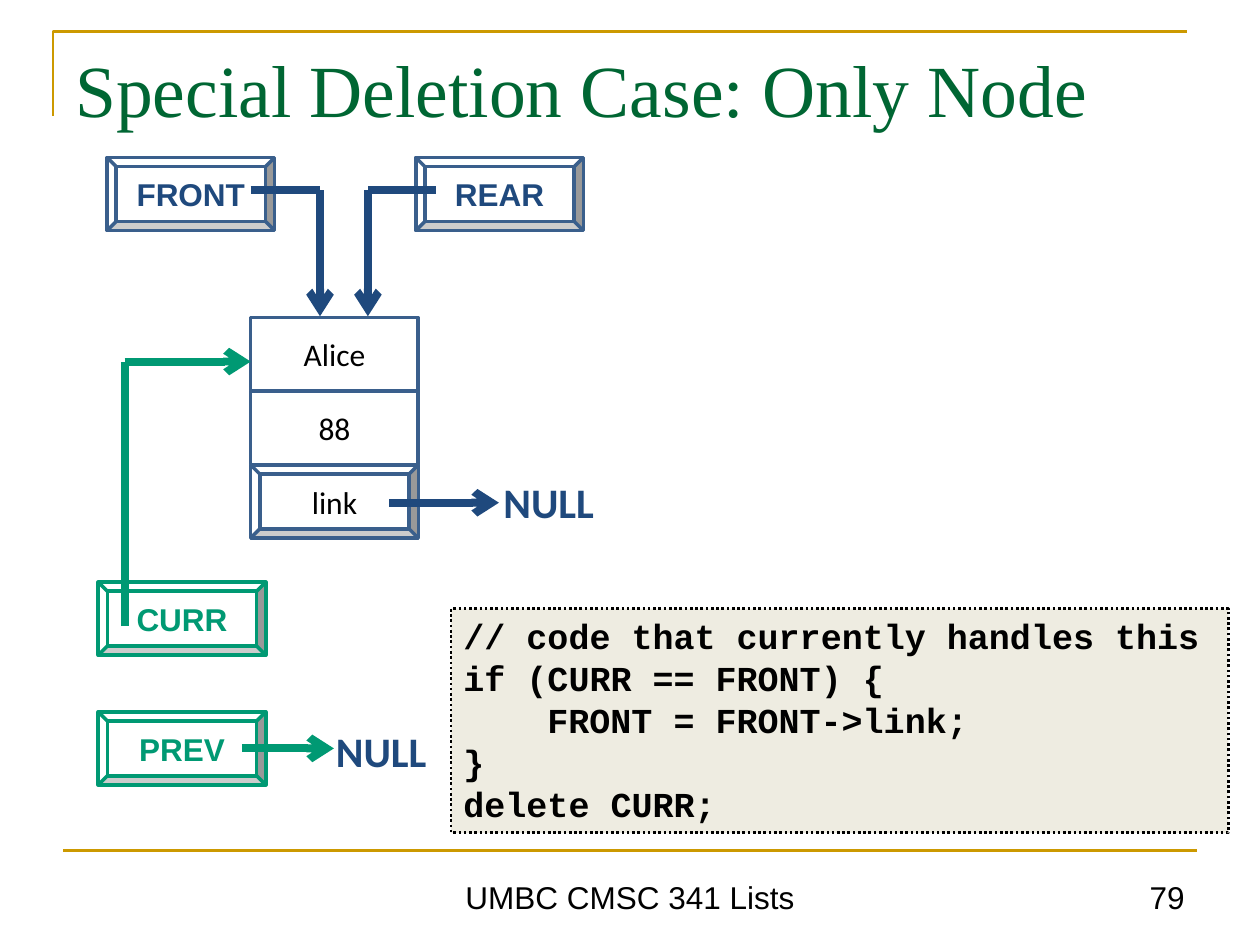
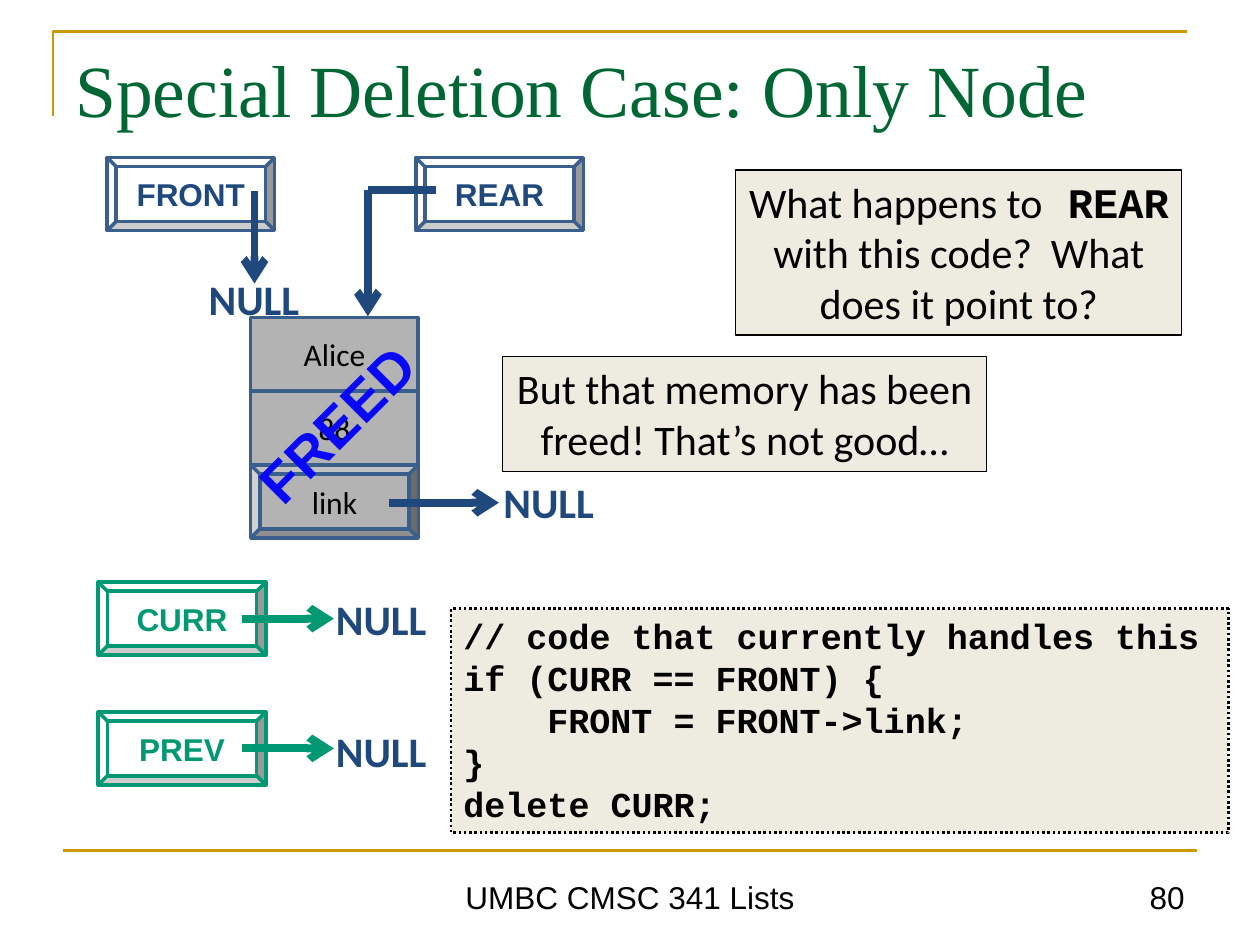
"""Build two slides on deleting the only node of a linked list."""
import pptx
import pptx.dml.color
import pptx.enum.dml
import pptx.enum.shapes
import pptx.enum.text
import pptx.oxml
import pptx.oxml.ns
import pptx.util

Inches = pptx.util.Inches
Pt = pptx.util.Pt
SHAPES = pptx.enum.shapes.MSO_SHAPE
ALIGN = pptx.enum.text.PP_ALIGN
ANCHOR = pptx.enum.text.MSO_ANCHOR

COLOURS = {
    "gold": "CC9900", "title": "006633", "black": "000000", "white": "FFFFFF",
    "navy": "1F497D", "edge": "3A5F8C", "green": "009973", "freed": "B3B3B3",
    "cream": "EEECE1", "blue": "0909F6", "deep_blue": "0101B3",
}
FORMATS = {
    "title": {"name": "Times New Roman", "size": Pt(42)},
    "footer": {"name": "Arial", "size": Pt(18)},
    "field": {"name": "Calibri", "size": Pt(18)},
    "pointer": {"name": "Arial", "size": Pt(18), "bold": True},
    "null": {"name": "Calibri", "size": Pt(24), "bold": True},
    "code": {"name": "Courier New", "size": Pt(20), "bold": True},
    "note": {"name": "Calibri", "size": Pt(24)},
    "note_code": {"name": "Courier New", "size": Pt(24), "bold": True},
    "stamp": {"name": "Arial", "size": Pt(32), "bold": True},
}
BOX_WIDTH, BOX_HEIGHT = 1.33, 0.58
NODE_LEFT, NODE_TOP, ROW_STEP = 1.99, 2.52, 0.585
CODE = [
    ("// code that currently handles this", 0),
    ("if (CURR == FRONT) {", 0),
    ("FRONT = FRONT->link;", 4),
    ("}", 0),
    ("delete CURR;", 0),
]
CODE_CHARACTER = Pt(12)


class ListDeck:
    """Hold the shared style and the slide being drawn."""

    def __init__(self):
        self.presentation = pptx.Presentation()
        self.presentation.slide_width = Inches(10)
        self.presentation.slide_height = Inches(7.5)
        self.slide = None

    def colour(self, name):
        return pptx.dml.color.RGBColor.from_string(COLOURS[name])

    def styled_run(self, paragraph, text, style, colour="black"):
        run = paragraph.add_run()
        run.text = text
        for attribute, value in FORMATS[style].items():
            setattr(run.font, attribute, value)
        run.font.color.rgb = self.colour(colour)

    def text(self, place, text, style, colour="black", align=ALIGN.CENTER, anchor=ANCHOR.TOP):
        shape = self.slide.shapes.add_textbox(*map(Inches, place))
        shape.text_frame.word_wrap = True
        shape.text_frame.vertical_anchor = anchor
        paragraph = shape.text_frame.paragraphs[0]
        paragraph.alignment = align
        self.styled_run(paragraph, text, style, colour)
        return shape

    def panel(self, kind, place, fill, line, width, anchor=ANCHOR.TOP):
        shape = self.slide.shapes.add_shape(kind, *map(Inches, place))
        shape.shadow.inherit = False
        shape.fill.solid()
        shape.fill.fore_color.rgb = self.colour(fill)
        shape.line.color.rgb = self.colour(line)
        shape.line.width = Pt(width)
        shape.text_frame.word_wrap = True
        shape.text_frame.vertical_anchor = anchor
        return shape

    def box(self, kind, left, top, text, style, colour, line, fill="white"):
        place = (left, top, BOX_WIDTH, BOX_HEIGHT)
        shape = self.panel(kind, place, fill, line, 2, ANCHOR.MIDDLE)
        paragraph = shape.text_frame.paragraphs[0]
        paragraph.alignment = ALIGN.CENTER
        self.styled_run(paragraph, text, style, colour)

    def pointer(self, left, top, name, colour="navy", line="edge"):
        self.box(SHAPES.BEVEL, left, top, name, "pointer", colour, line)

    def node(self, fill):
        kinds = (SHAPES.RECTANGLE, SHAPES.RECTANGLE, SHAPES.BEVEL)
        rows = list(enumerate(zip(kinds, ("Alice", "88", "link"))))
        for row, (kind, text) in reversed(rows):
            top = NODE_TOP + row * ROW_STEP
            self.box(kind, NODE_LEFT, top, text, "field", "black", "edge", fill)

    def line(self, start, end, colour="navy", width=4.5, arrow=False):
        connector = self.slide.shapes.add_connector(
            pptx.enum.shapes.MSO_CONNECTOR.STRAIGHT, *map(Inches, start + end))
        connector.line.color.rgb = self.colour(colour)
        connector.line.width = Pt(width)
        properties = connector._element.spPr
        properties.append(pptx.oxml.parse_xml(
            f"<a:effectLst {pptx.oxml.ns.nsdecls('a')}/>"))
        if arrow:
            connector.line._get_or_add_ln().append(pptx.oxml.parse_xml(
                f"<a:tailEnd {pptx.oxml.ns.nsdecls('a')} type='arrow'/>"))

    def elbow(self, start, corner, end, colour="navy"):
        self.line(corner, end, colour, arrow=True)
        self.line(start, corner, colour)

    def null(self, left, top):
        self.text((left, top, 1.55, 0.51), "NULL", "null", "navy")

    def null_arrow(self, y, null_top):
        self.line((1.92, y), (2.65, y), "green", arrow=True)
        self.null(2.25, null_top)

    def code(self):
        shape = self.panel(SHAPES.RECTANGLE, (3.58, 4.83, 6.17, 1.78), "cream", "black", 1.5)
        shape.line.dash_style = pptx.enum.dml.MSO_LINE.ROUND_DOT
        frame = shape.text_frame
        for number, (text, indent) in enumerate(CODE):
            paragraph = frame.add_paragraph() if number else frame.paragraphs[0]
            paragraph.alignment = ALIGN.LEFT
            paragraph._p.get_or_add_pPr().set("marL", str(indent * CODE_CHARACTER))
            self.styled_run(paragraph, text, "code")

    def note(self, place, *runs):
        shape = self.panel(SHAPES.RECTANGLE, place, "cream", "black", 0.75)
        paragraph = shape.text_frame.paragraphs[0]
        paragraph.alignment = ALIGN.CENTER
        for text, style in runs:
            self.styled_run(paragraph, text, style)

    def stamp(self, place, text):
        shape = self.text(place, text, "stamp")
        shape.text_frame.word_wrap = False
        shape.rotation = 315
        font = shape.text_frame.paragraphs[0].runs[0].font
        font._element.set("spc", "50")
        font.fill.gradient()
        font.fill.gradient_angle = 270
        stops = zip(font.fill.gradient_stops, (0.25, 1), ("blue", "deep_blue"))
        for stop, position, colour in stops:
            stop.position = position
            stop.color.rgb = self.colour(colour)

    def start_slide(self, number, node_fill):
        self.slide = self.presentation.slides.add_slide(self.presentation.slide_layouts[6])
        builder = self.slide.shapes.build_freeform(Inches(0.42), Inches(0.92))
        corners = [(0.42, 0.25), (9.42, 0.25)]
        builder.add_line_segments([tuple(map(Inches, corner)) for corner in corners], close=False)
        frame = builder.convert_to_shape()
        frame.shadow.inherit = False
        frame.fill.background()
        frame.line.color.rgb = self.colour("gold")
        frame.line.width = Pt(1.5)
        self.line((0.5, 6.75), (9.5, 6.75), "gold", 1.5)
        self.text((0.5, 0.3, 8.99, 1.11), "Special Deletion Case: Only Node",
                  "title", "title", ALIGN.LEFT)
        self.text((1.75, 6.83, 6.5, 0.49), "UMBC CMSC 341 Lists", "footer", anchor=ANCHOR.BOTTOM)
        self.text((7.17, 6.83, 2.33, 0.49), str(number), "footer",
                  align=ALIGN.RIGHT, anchor=ANCHOR.BOTTOM)
        self.node(node_fill)
        self.pointer(0.85, 1.25, "FRONT")
        self.pointer(3.3, 1.25, "REAR")
        self.pointer(0.78, 4.62, "CURR", "green", "green")
        self.pointer(0.78, 5.65, "PREV", "green", "green")
        self.elbow((3.46, 1.51), (2.92, 1.51), (2.92, 2.51))
        self.line((3.09, 3.99), (3.96, 3.99), arrow=True)
        self.null(3.58, 3.73)
        self.null_arrow(5.94, 5.71)
        self.code()


def main():
    deck = ListDeck()

    deck.start_slide(79, "white")
    deck.elbow((1.99, 1.51), (2.54, 1.51), (2.54, 2.51))
    deck.elbow((0.99, 4.97), (0.99, 2.87), (1.99, 2.87), "green")

    deck.start_slide(80, "freed")
    deck.line((2.02, 1.52), (2.02, 2.25), arrow=True)
    deck.null(1.24, 2.12)
    deck.null_arrow(4.91, 4.66)
    deck.note((3.99, 2.83, 3.84, 0.91),
              ("But that memory has been freed! That’s not good…", "note"))
    deck.note((5.84, 1.35, 3.54, 1.31), ("What happens to", "note"),
              (" REAR ", "note_code"), ("with this code?  What does it point to?", "note"))
    deck.stamp((1.79, 3.04, 1.76, 0.64), "FREED")

    deck.presentation.save("out.pptx")


if __name__ == "__main__":
    main()
